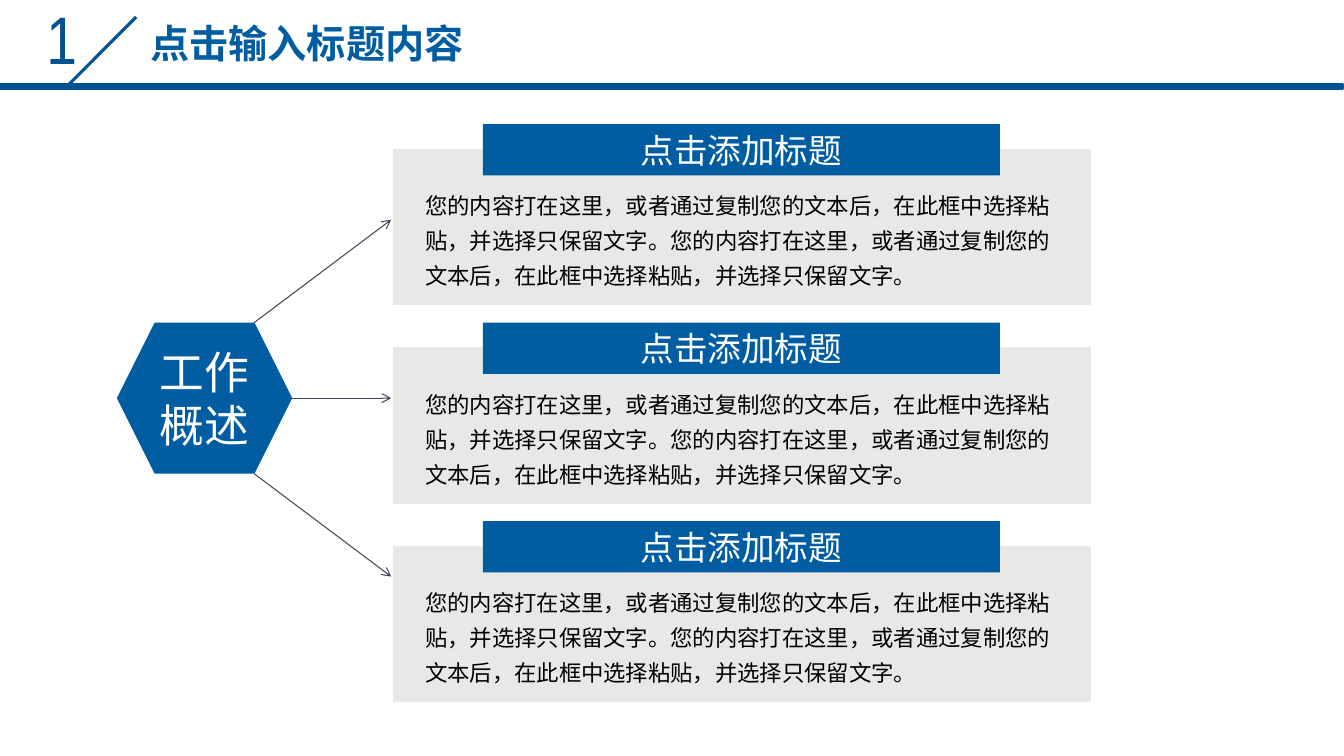
from dataclasses import dataclass

from lxml import etree
from pptx import Presentation
from pptx.dml.color import RGBColor
from pptx.enum import shapes, text
from pptx.oxml.ns import qn
from pptx.util import Pt


@dataclass(frozen=True)
class Theme:
    blue: str = "005DA2"
    dark_blue: str = "005292"
    grey: str = "E8E8E6"
    white: str = "FFFFFF"
    black: str = "000000"
    arrow: str = "414455"
    font: str = "Noto Sans CJK SC"
    number_font: str = "Arial Narrow"
    number: int = 48
    hub: int = 32
    heading: int = 28
    title: int = 24
    body: int = 16


theme = Theme()
rgb = RGBColor.from_string
RECT = shapes.MSO_SHAPE.RECTANGLE
INSETS = (7.2, 3.6, 7.2, 3.6)
BODY = "您的内容打在这里，或者通过复制您的文本后，在此框中选择粘贴，并选择只保留文字。" * 2

prs = Presentation()
prs.slide_width, prs.slide_height = Pt(960), Pt(540)
s = prs.slides.add_slide(prs.slide_layouts[6])


def add_box(box, words="", size=0, color=theme.black, fill=None, line=None,
            kind=RECT, font=theme.font, center=True, insets=INSETS):
    """Add a filled shape, or a text box when there is no fill."""
    box = [Pt(v) for v in box]
    if fill:
        sp = s.shapes.add_shape(kind, *box)
        sp.shadow.inherit = False
        sp.fill.solid()
        sp.fill.fore_color.rgb = rgb(fill)
        if line:
            sp.line.color.rgb = rgb(line)
            sp.line.width = Pt(2)
        else:
            sp.line.fill.background()
    else:
        sp = s.shapes.add_textbox(*box)
    if words:
        tf = sp.text_frame
        tf.word_wrap = True
        tf.margin_left, tf.margin_top, tf.margin_right, tf.margin_bottom = map(Pt, insets)
        tf.vertical_anchor = text.MSO_ANCHOR.MIDDLE if fill else text.MSO_ANCHOR.TOP
        tf.text = words
        p = tf.paragraphs[0]
        p.alignment = text.PP_ALIGN.CENTER if center else text.PP_ALIGN.LEFT
        r = p.runs[0]
        r.font.size = Pt(size)
        r.font.name = font
        r.font.color.rgb = rgb(color)
        etree.SubElement(r.font._element, qn("a:ea"), typeface=font)
    return sp


def add_line(start, end, color, width, arrow=False):
    c = s.shapes.add_connector(shapes.MSO_CONNECTOR.STRAIGHT, *map(Pt, start + end))
    c.line.color.rgb = rgb(color)
    c.line.width = Pt(width)
    if arrow:
        etree.SubElement(c.line._get_or_add_ln(), qn("a:tailEnd"), type="arrow")
    etree.SubElement(c._element.spPr, qn("a:effectLst"))


# Header
add_box((26.6, -2.2, 24.5, 65.5), "1", theme.number, theme.dark_blue,
        font=theme.number_font, center=False, insets=(6.5, 0, 0, 0))
add_line((97.2, 12.2), (49, 60.5), theme.dark_blue, 2.25)
add_box((0, 60, 959, 3.6), fill=theme.dark_blue, line=theme.dark_blue)
heading = add_box((90, 13.7, 258.5, 41), "点击输入标题内容", theme.heading, theme.blue,
                  insets=(0, 0, 0, 0))
heading.text_frame.paragraphs[0].runs[0].font.bold = True

# Three content panels
for i in range(3):
    top = 88.6 + i * 141.8
    add_box((279.4, top + 16.5, 501.1, 113.8), fill=theme.grey, line=theme.white)
    add_box((344.9, top, 369.4, 36.7), "点击添加标题", theme.title, theme.white, theme.blue)
    body = add_box((296.6, top + 39.6, 475.9, 82.8), BODY, theme.body, center=False)
    body.text_frame.paragraphs[0].line_spacing = 1.3

# Hub, with an arrow to each panel
add_box((83.5, 230.4, 125.3, 108), "工作概述", theme.hub, theme.white, theme.blue,
        kind=shapes.MSO_SHAPE.HEXAGON)
for start, end_y in (((181.6, 230.4), 157), ((208.8, 284.4), 284.4), ((181.6, 338.4), 411.8)):
    add_line(start, (279.4, end_y), theme.arrow, 0.75, arrow=True)

prs.save("out.pptx")
